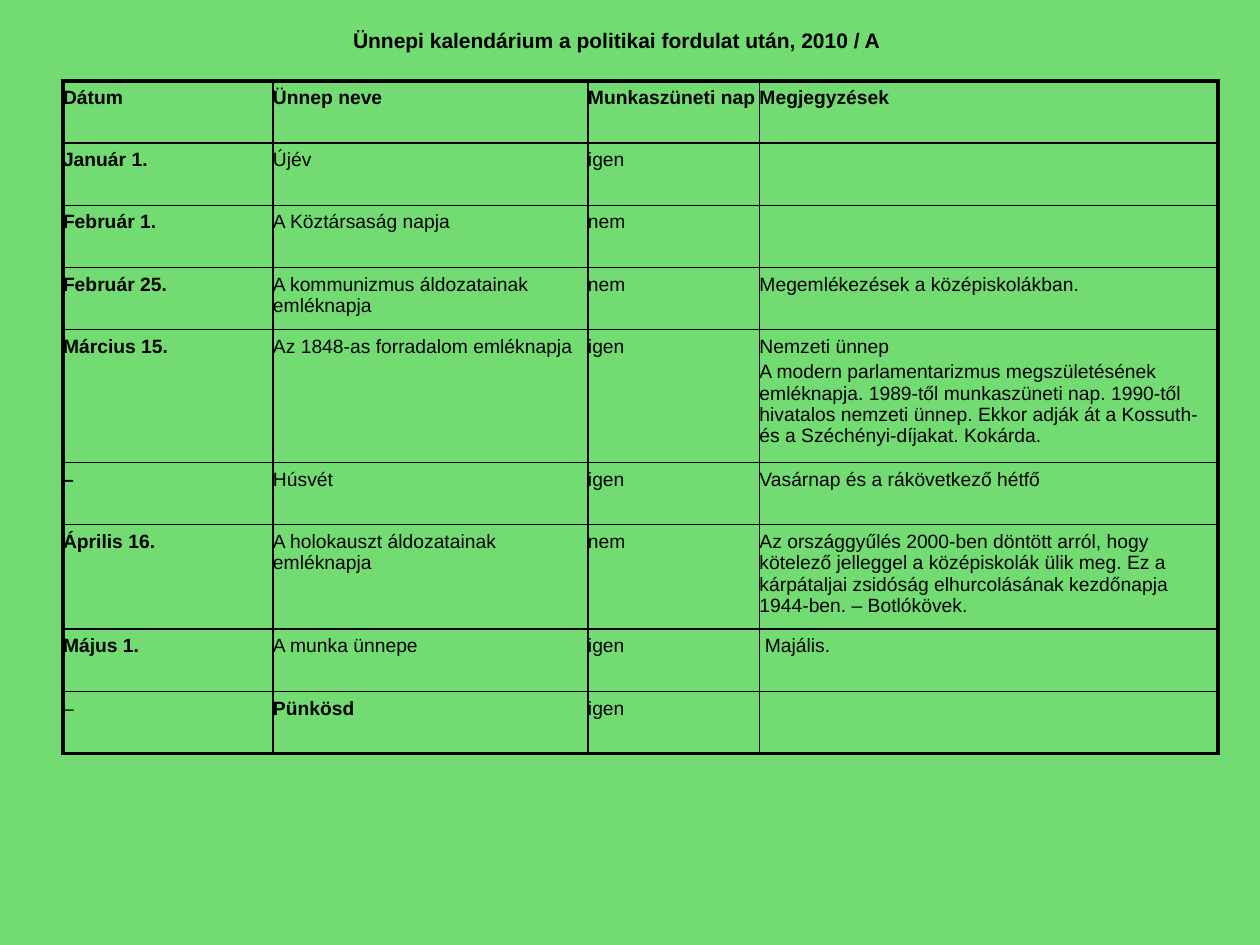
from dataclasses import dataclass

import lxml.etree
import pptx
import pptx.dml.color
import pptx.enum.text
import pptx.oxml.ns
import pptx.util

FONT = "Arial"
INK = "000000"
GREEN = "72DC72"
OUTER_LINE = 2.25
INNER_LINE = 1
COLUMN_WIDTHS = (120, 180, 98, 262)
SINGLE_ROW = 35.55


@dataclass(frozen=True)
class Holiday:
    date: str
    name: str
    day_off: str
    notes: tuple[str, ...] = ()
    bold: tuple[bool, ...] = (True, False, False, False)
    height: float = SINGLE_ROW

    def columns(self) -> tuple[tuple[str, ...], ...]:
        return (self.date,), (self.name,), (self.day_off,), self.notes


CALENDAR = (
    Holiday("Dátum", "Ünnep neve", "Munkaszüneti nap", ("Megjegyzések",), bold=(True,) * 4),
    Holiday("Január 1.", "Újév", "igen"),
    Holiday("Február 1.", "A Köztársaság napja", "nem"),
    Holiday("Február 25.", "A kommunizmus áldozatainak emléknapja", "nem",
            ("Megemlékezések a középiskolákban.",)),
    Holiday("Március 15.", "Az 1848-as forradalom emléknapja", "igen",
            ("Nemzeti ünnep",
             "A modern parlamentarizmus megszületésének emléknapja. 1989-től munkaszüneti nap. "
             "1990-től hivatalos nemzeti ünnep. Ekkor adják át a Kossuth- és a "
             "Széchényi-díjakat. Kokárda."),
            height=75.8),
    Holiday("–", "Húsvét", "igen", ("Vasárnap és a rákövetkező hétfő",)),
    Holiday("Április 16.", "A holokauszt áldozatainak emléknapja", "nem",
            ("Az országgyűlés 2000-ben döntött arról, hogy kötelező jelleggel a középiskolák "
             "ülik meg. Ez a kárpátaljai zsidóság elhurcolásának kezdőnapja 1944-ben. "
             "– Botlókövek.",),
            height=59.8),
    Holiday("Május 1.", "A munka ünnepe", "igen", (" Majális.",)),
    Holiday("–", "Pünkösd", "igen", bold=(False, True, False, False)),
)


def rgb(color: str) -> pptx.dml.color.RGBColor:
    return pptx.dml.color.RGBColor.from_string(color)


def style_paragraph(paragraph, size: float, bold: bool) -> None:
    paragraph.font.name = FONT
    paragraph.font.size = pptx.util.Pt(size)
    paragraph.font.bold = bold
    paragraph.font.color.rgb = rgb(INK)


def set_borders(cell, widths: dict[str, float]) -> None:
    qn = pptx.oxml.ns.qn
    properties = cell._tc.get_or_add_tcPr()
    for position, (side, width) in enumerate(widths.items()):
        border = lxml.etree.Element(qn(f"a:ln{side}"), w=str(pptx.util.Pt(width)))
        fill = lxml.etree.SubElement(border, qn("a:solidFill"))
        lxml.etree.SubElement(fill, qn("a:srgbClr"), val=INK)
        properties.insert(position, border)


def fill_cell(cell, texts: tuple[str, ...], bold: bool) -> None:
    cell.fill.background()
    cell.margin_left = cell.margin_right = pptx.util.Pt(0)
    cell.margin_top = cell.margin_bottom = pptx.util.Pt(3.6)
    cell.text = "\n".join(texts)
    for index, paragraph in enumerate(cell.text_frame.paragraphs):
        style_paragraph(paragraph, 11, bold)
        if index:
            paragraph.space_before = pptx.util.Pt(2.2)


def add_title(slide, text: str) -> None:
    title = slide.shapes.title
    title.left, title.top = pptx.util.Pt(132), pptx.util.Pt(12.3)
    title.width, title.height = pptx.util.Pt(444), pptx.util.Pt(21.8)
    frame = title.text_frame
    frame.text = text
    frame.word_wrap = True
    frame.auto_size = pptx.enum.text.MSO_AUTO_SIZE.NONE
    frame.vertical_anchor = pptx.enum.text.MSO_ANCHOR.TOP
    heading = frame.paragraphs[0]
    heading.alignment = pptx.enum.text.PP_ALIGN.CENTER
    style_paragraph(heading, 12, True)


def add_calendar(slide, holidays: tuple[Holiday, ...]) -> None:
    calendar = slide.shapes.add_table(
        len(holidays), len(COLUMN_WIDTHS),
        pptx.util.Pt(36), pptx.util.Pt(46.2),
        pptx.util.Pt(sum(COLUMN_WIDTHS)),
        pptx.util.Pt(sum(holiday.height for holiday in holidays)),
    ).table
    calendar.first_row = calendar.horz_banding = False
    for column, width in zip(calendar.columns, COLUMN_WIDTHS):
        column.width = pptx.util.Pt(width)
    last_row, last_column = len(holidays) - 1, len(COLUMN_WIDTHS) - 1
    for row, holiday in enumerate(holidays):
        calendar.rows[row].height = pptx.util.Pt(holiday.height)
        for column, (texts, bold) in enumerate(zip(holiday.columns(), holiday.bold)):
            cell = calendar.cell(row, column)
            fill_cell(cell, texts, bold)
            on_edge = {"L": column == 0, "R": column == last_column,
                       "T": row == 0, "B": row == last_row}
            set_borders(cell, {side: OUTER_LINE if outer else INNER_LINE
                               for side, outer in on_edge.items()})


def main() -> None:
    presentation = pptx.Presentation()
    presentation.slide_width = pptx.util.Pt(720)
    presentation.slide_height = pptx.util.Pt(540)
    slide = presentation.slides.add_slide(presentation.slide_layouts.get_by_name("Title Only"))
    slide.background.fill.solid()
    slide.background.fill.fore_color.rgb = rgb(GREEN)
    add_title(slide, "Ünnepi kalendárium a politikai fordulat után, 2010 / A ")
    add_calendar(slide, CALENDAR)
    presentation.save("out.pptx")


if __name__ == "__main__":
    main()
